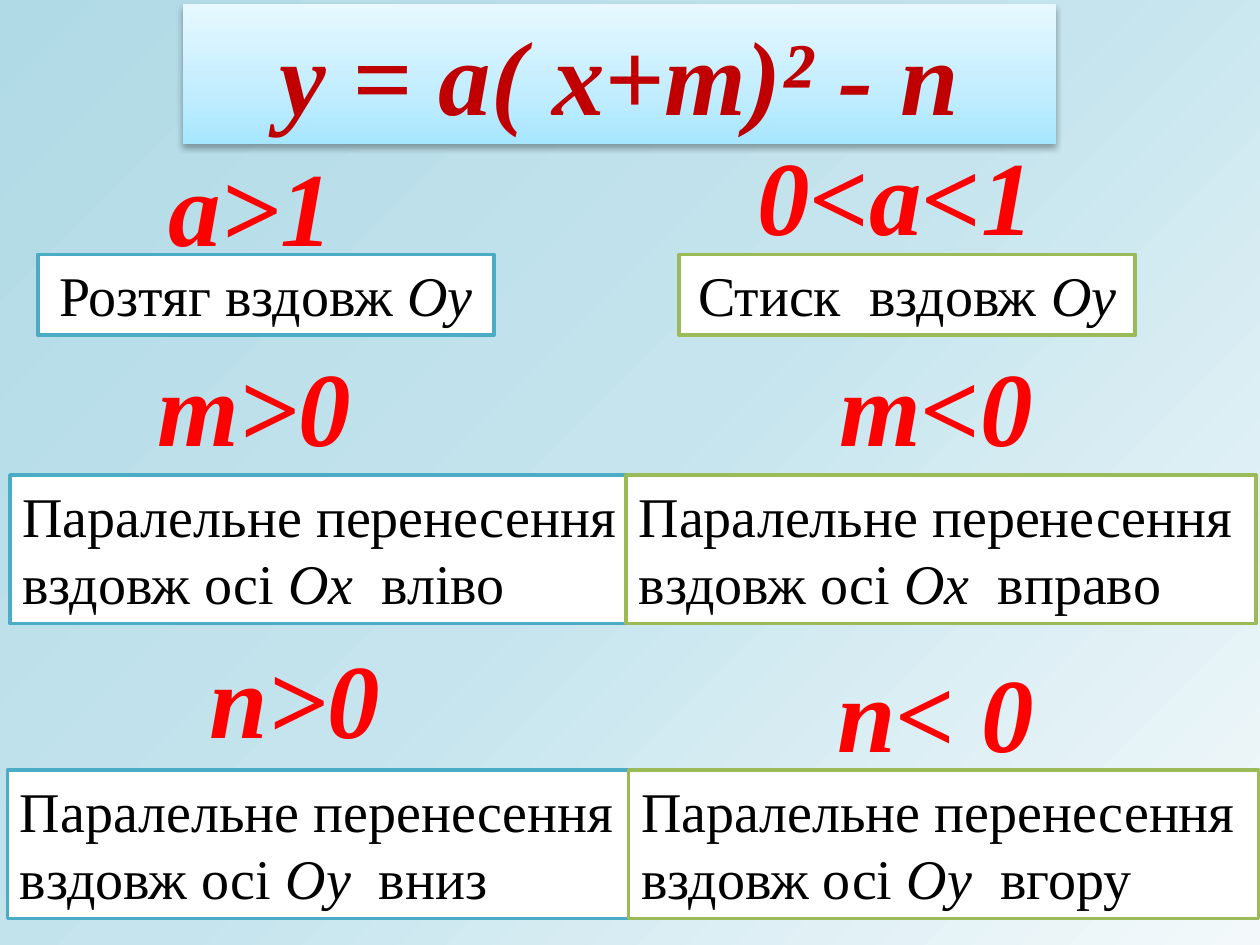
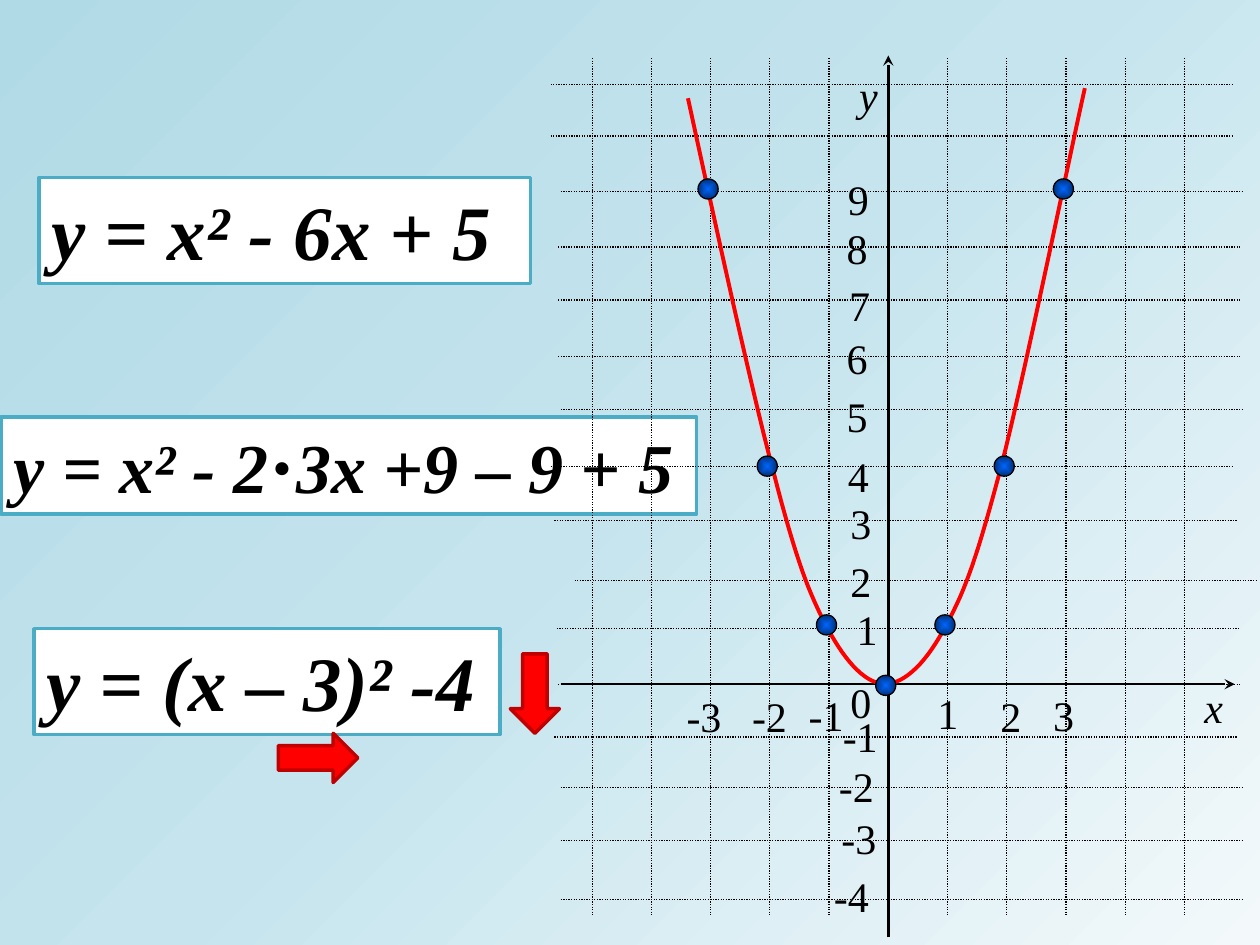
from dataclasses import dataclass
from pptx import Presentation
from pptx.dml.color import RGBColor
from pptx.enum.dml import MSO_LINE
from pptx.enum.shapes import MSO_CONNECTOR, MSO_SHAPE
from pptx.enum.text import MSO_ANCHOR, MSO_AUTO_SIZE, PP_ALIGN
from pptx.oxml import parse_xml
from pptx.oxml.ns import nsdecls, qn
from pptx.util import Inches, Pt


@dataclass(frozen=True)
class Theme:
    font: str = "Times New Roman"
    black: str = "000000"
    white: str = "FFFFFF"
    red: str = "FF0000"
    dark_red: str = "C00000"
    teal: str = "4BACC6"
    green: str = "9BBB59"
    background: tuple = ((0, "B0DAE6"), (50, "C5E4ED"), (100, "F3F9FB"))
    banner: tuple = ((0, "A7E6FF"), (35, "C1EDFF"), (100, "E7F8FF"))
    dot: tuple = ((0, "0066FF"), (100, "002F76"))
    display: int = 60
    formula: int = 44
    formula_small: int = 40
    body: int = 32
    label: int = 24


T = Theme()

# Offsets in inches from the origin of the coordinate plane.
COLUMN_STEP = 0.47
GRID_ROWS = [
    (-2.68, -4.76), (-2.68, -4.35), (-2.6, -3.91), (-2.62, -3.47),
    (-2.62, -3.05), (-2.62, -2.6), (-2.6, -2.18), (-2.68, -1.73),
    (-2.65, -1.3), (-2.49, -0.82), (-2.63, -0.44), (-2.62, 0),
    (-2.65, 0.42), (-2.6, 0.82), (-2.6, 1.24), (-2.6, 1.71),
]
Y_LABELS = [
    ("9", -0.42, -4.1), ("8", -0.43, -3.71), ("7", -0.41, -3.26),
    ("6", -0.43, -2.84), ("5", -0.43, -2.38), ("4", -0.42, -1.9),
    ("3", -0.4, -1.53), ("2", -0.4, -1.07), ("1", -0.35, -0.69),
    ("0", -0.4, -0.11), ("-1", -0.46, 0.16), ("-2", -0.49, 0.56),
    ("-3", -0.47, 0.97), ("-4", -0.53, 1.43),
]
X_LABELS = [
    ("-3", -1.7, 0), ("-2", -1.18, 0), ("-1", -0.73, -0.01),
    ("1", 0.29, -0.02), ("2", 0.79, 0), ("3", 1.21, -0.01),
]
AXIS_NAMES = [("х", 2.41, -0.07), ("у", -0.33, -4.93)]
PARABOLA_START = (-1.59, -4.65)
PARABOLA_CURVES = [
    ((-1.48, -4.15), (-1.1, -2.38), (-0.91, -1.68)),
    ((-0.73, -0.98), (-0.63, -0.72), (-0.48, -0.44)),
    ((-0.33, -0.16), (-0.17, 0), (-0.02, 0)),
    ((0.14, -0.01), (0.31, -0.18), (0.46, -0.47)),
    ((0.62, -0.76), (0.71, -1.03), (0.9, -1.74)),
    ((1.08, -2.45), (1.42, -4.1), (1.56, -4.73)),
]
DOT_HEIGHTS = {-3: -3.93, -2: -1.73, -1: -0.47, 0: 0.01, 1: -0.47, 2: -1.73, 3: -3.93}


def rgb(color):
    return RGBColor.from_string(color)


def inches(*values):
    return [Inches(v) for v in values]


def set_gradient(fill, element, stops, angle=None):
    """Fill with any number of stops; without an angle the gradient runs from the centre."""
    fill.gradient()
    old = next(element.iter(qn("a:gradFill")))
    gs = "".join(f'<a:gs pos="{pos * 1000}"><a:srgbClr val="{color}"/></a:gs>'
                 for pos, color in stops)
    if angle is None:
        direction = ('<a:path path="shape"><a:fillToRect l="50000" t="50000" '
                     'r="50000" b="50000"/></a:path>')
    else:
        direction = f'<a:lin ang="{angle * 60000}" scaled="0"/>'
    new = parse_xml(f'<a:gradFill {nsdecls("a")} rotWithShape="1">'
                    f'<a:gsLst>{gs}</a:gsLst>{direction}</a:gradFill>')
    old.getparent().replace(old, new)


def write(tf, text, size=T.body, color=T.black, bold=False, italic=False,
          align=PP_ALIGN.LEFT):
    """Write one paragraph; parts between asterisks switch the slant."""
    tf.word_wrap = True
    tf.auto_size = MSO_AUTO_SIZE.NONE
    tf.vertical_anchor = MSO_ANCHOR.TOP
    p = tf.paragraphs[0]
    p.alignment = align
    for i, part in enumerate(text.split("*")):
        if part:
            r = p.add_run()
            r.text = part
            r.font.name, r.font.size = T.font, Pt(size)
            r.font.bold, r.font.italic = bold, italic != bool(i % 2)
            r.font.color.rgb = rgb(color)


def add_text(s, box, text, **style):
    write(s.shapes.add_textbox(*inches(*box)).text_frame, text, **style)


def add_shape(s, kind, box, fill=None, line=T.black, width=2):
    sp = s.shapes.add_shape(kind, *inches(*box))
    sp.shadow.inherit = False
    if fill:
        sp.fill.solid()
        sp.fill.fore_color.rgb = rgb(fill)
    sp.line.color.rgb = rgb(line)
    sp.line.width = Pt(width)
    return sp


def add_card(s, box, text, line=T.teal, **style):
    sp = add_shape(s, MSO_SHAPE.RECTANGLE, box, T.white, line)
    write(sp.text_frame, text, **style)


def add_line(s, start, end, width=0.75, dotted=False, arrow=False):
    c = s.shapes.add_connector(MSO_CONNECTOR.STRAIGHT, *inches(*start, *end))
    c.line.color.rgb = rgb(T.black)
    c.line.width = Pt(width)
    if dotted:
        c.line.dash_style = MSO_LINE.ROUND_DOT
    if arrow:
        ln = c.element.spPr.find(qn("a:ln"))
        ln.append(parse_xml(f'<a:tailEnd {nsdecls("a")} type="stealth"/>'))
    c.element.spPr.append(parse_xml(f'<a:effectLst {nsdecls("a")}/>'))


def formula_banner(s, box):
    title = s.shapes.title
    title.left, title.top, title.width, title.height = inches(*box)
    set_gradient(title.fill, title.element, T.banner, 270)
    title.element.spPr.append(parse_xml(
        f'<a:effectLst {nsdecls("a")}><a:outerShdw blurRad="{Pt(3.5)}" dist="{Pt(2.2)}" '
        'dir="5400000" rotWithShape="0"><a:srgbClr val="000000"><a:alpha val="32000"/>'
        '</a:srgbClr></a:outerShdw></a:effectLst>'))
    write(title.text_frame, "y = a( x+m)² - n", size=T.display, color=T.dark_red,
          bold=True, italic=True, align=PP_ALIGN.CENTER)


def condition(s, box, heading, heading_offset, text, line, align=PP_ALIGN.LEFT):
    """A red inequality above the card that says what it does to the graph."""
    left, top, _, _ = box
    dx, dy = heading_offset
    add_text(s, (left + dx, top + dy, 3.23, 1.11), heading, size=T.display, color=T.red,
             bold=True, italic=True, align=PP_ALIGN.CENTER)
    add_card(s, box, text, line, align=align)


def transformations_slide(prs):
    s = prs.slides.add_slide(prs.slide_layouts[5])
    formula_banner(s, (1.45, 0.03, 6.93, 1.11))
    shift = "Паралельне перенесення вздовж осі "
    stretch, move = (3.62, 0.64), (5, 1.18)
    for left, top, size, heading, offset, text, line in [
        (0.3, 2.02, stretch, " a>1", (-0.03, -0.95), "Розтяг вздовж *Оу", T.teal),
        (5.39, 2.02, stretch, " 0<a<1", (0, -1.03), "Стиск  вздовж *Оу", T.green),
        (0.08, 3.77, move, " m>0", (0.22, -1.11), shift + "*Ох*  вліво", T.teal),
        (4.97, 3.77, move, " m<0", (0.74, -1.11), shift + "*Ох*  вправо", T.green),
        (0.06, 6.11, move, " n>0", (0.56, -1.13), shift + "*Оу*  вниз", T.teal),
        (4.99, 6.11, move, " n< 0", (0.72, -1.02), shift + "*Оу*  вгору", T.green),
    ]:
        align = PP_ALIGN.CENTER if size == stretch else PP_ALIGN.LEFT
        condition(s, (left, top, *size), heading, offset, text, line, align)


def formula_steps(s, left, top):
    for dx, dy, w, h, text, size in [
        (0.3, 0, 3.9, 0.84, "y = x² - 6x + 5", T.formula),
        (0, 1.9, 5.52, 0.77, "y = x² - 2⋅3x +9 – 9 + 5", T.formula_small),
        (0.26, 3.58, 3.7, 0.84, "y = (x – 3)² -4", T.formula),
    ]:
        add_card(s, (left + dx, top + dy, w, h), text, size=size, bold=True, italic=True)
    for kind, dx, dy, w, h in [(MSO_SHAPE.RIGHT_ARROW, 2.2, 4.41, 0.63, 0.39),
                               (MSO_SHAPE.DOWN_ARROW, 4.04, 3.78, 0.39, 0.63)]:
        add_shape(s, kind, (left + dx, top + dy, w, h), T.red, T.dark_red)


def grid_and_axes(s, x0, y0):
    for dx, dy in GRID_ROWS:
        add_line(s, (x0 + dx, y0 + dy), (x0 + dx + 5.42, y0 + dy), dotted=True)
    for column in range(-5, 6):
        if column:
            x = x0 + column * COLUMN_STEP
            add_line(s, (x, y0 - 4.97), (x, y0 + 1.83), dotted=True)
    add_line(s, (x0, y0 + 2.01), (x0, y0 - 4.99), width=1.5, arrow=True)
    add_line(s, (x0 - 2.6, y0), (x0 + 2.75, y0), width=1.5, arrow=True)


def bezier(p0, p1, p2, p3, steps=16):
    for i in range(1, steps + 1):
        t = i / steps
        u = 1 - t
        yield tuple(u**3 * a + 3 * u * u * t * b + 3 * u * t * t * c + t**3 * d
                    for a, b, c, d in zip(p0, p1, p2, p3))


def parabola(s, x0, y0):
    points = [PARABOLA_START]
    for curve in PARABOLA_CURVES:
        points += bezier(points[-1], *curve)
    points = [inches(x0 + x, y0 + y) for x, y in points]
    builder = s.shapes.build_freeform(*points[0])
    builder.add_line_segments(points[1:], close=False)
    sp = builder.convert_to_shape()
    sp.shadow.inherit = False
    sp.fill.background()
    sp.line.color.rgb = rgb(T.red)
    sp.line.width = Pt(2.25)

    d = 0.16
    for x, dy in DOT_HEIGHTS.items():
        box = (x0 - 0.02 + x * COLUMN_STEP - d / 2, y0 + dy - d / 2, d, d)
        dot = add_shape(s, MSO_SHAPE.FLOWCHART_CONNECTOR, box, width=0.75)
        set_gradient(dot.fill, dot.element, T.dot)


def axis_labels(s, x0, y0):
    for text, dx, dy in Y_LABELS + X_LABELS + AXIS_NAMES:
        add_text(s, (x0 + dx, y0 + dy, 0.65, 0.5), text, size=T.label,
                 italic=text.isalpha())


def graph_slide(prs):
    s = prs.slides.add_slide(prs.slide_layouts[6])
    formula_steps(s, 0.01, 1.41)
    origin = (7.05, 5.43)
    grid_and_axes(s, *origin)
    parabola(s, *origin)
    axis_labels(s, *origin)


def main():
    prs = Presentation()
    prs.slide_width, prs.slide_height = inches(10, 7.5)
    master = prs.slide_master
    set_gradient(master.background.fill, master.element, T.background, 45)
    transformations_slide(prs)
    graph_slide(prs)
    prs.save("out.pptx")


if __name__ == "__main__":
    main()
